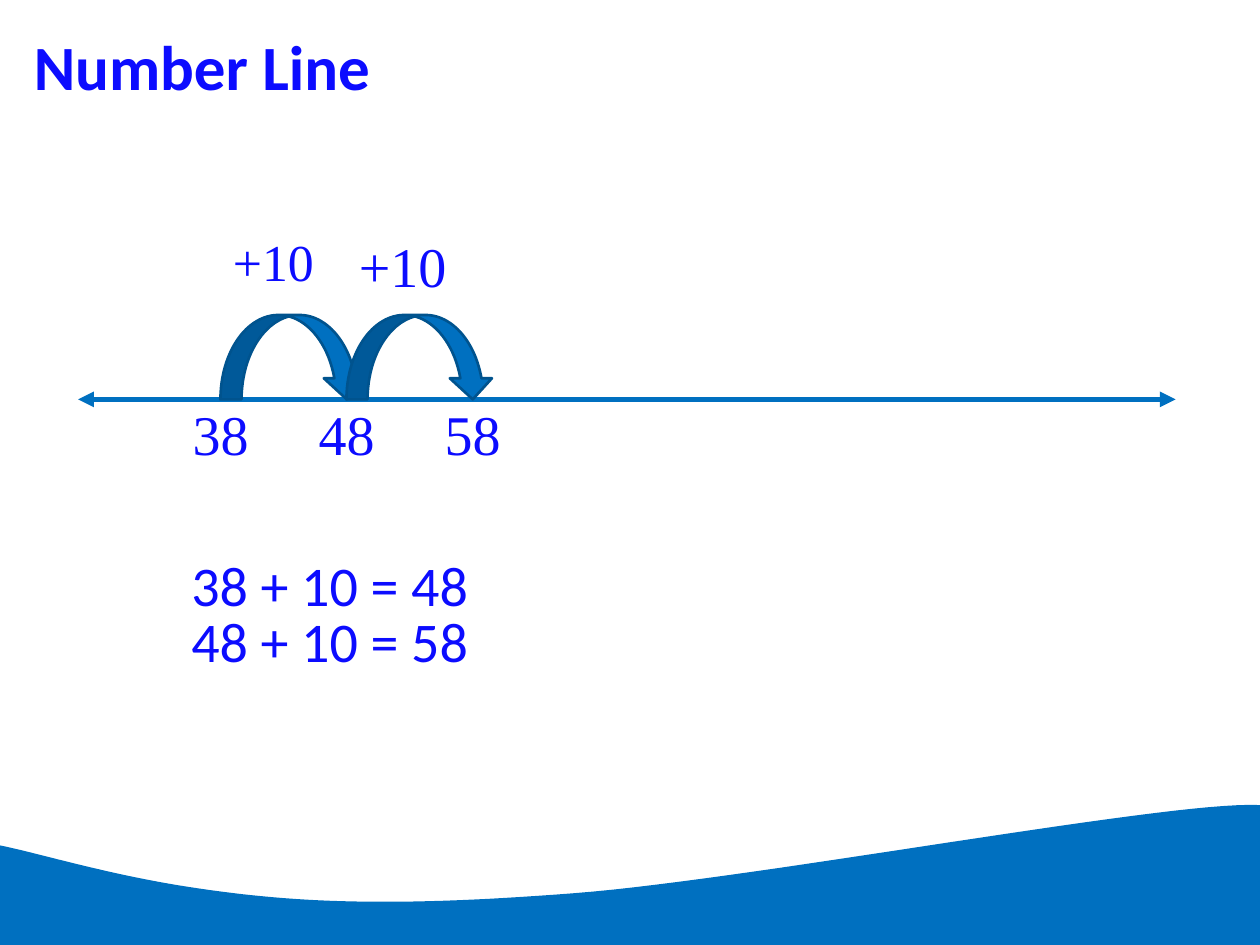
from lxml.etree import SubElement
from pptx import Presentation
from pptx.dml.color import RGBColor
from pptx.enum.shapes import MSO_CONNECTOR, MSO_SHAPE
from pptx.enum.text import MSO_ANCHOR
from pptx.oxml.ns import qn
from pptx.util import Inches, Pt

COLORS = {"wave": "0070C0", "edge": "00538E", "text": "0C0CFF"}
SANS, SERIF = "Calibri", "Times New Roman"

TITLE = "Number Line"
SUMS = ["38 + 10 = 48", "48 + 10 = 58"]
TICKS = ["38", "48", "58"]
# text, size, line spacing
JUMPS = [("+10", 29.6, 0.9), ("+10", 32, None)]
STEP = 1
LINE_Y = 3.17
# start point, then two controls and an end for each curve
CREST = [(0, 6.71),
         (0.3, 6.77), (0.85, 6.94), (1.5, 7.04),
         (2.34, 7.17), (3.12, 7.2), (4.55, 7.09),
         (5.98, 6.98), (9.3, 6.35), (10, 6.39)]

deck = Presentation()
deck.slide_width, deck.slide_height = Inches(10), Inches(7.5)
slide = deck.slides.add_slide(deck.slide_layouts[6])
shapes = slide.shapes


def color(name):
    return RGBColor.from_string(COLORS[name])


def bezier(a, b, c, d, count=30):
    """Points along a cubic curve, without its start."""
    for n in range(1, count + 1):
        t = n / count
        u = 1 - t
        yield tuple(u**3 * p + 3 * u * u * t * q + 3 * u * t * t * r + t**3 * s
                    for p, q, r, s in zip(a, b, c, d))


def add_wave():
    pts = [CREST[0]]
    for i in range(0, len(CREST) - 1, 3):
        pts += bezier(*CREST[i:i + 4])
    pts += [(10, 7.5), (0, 7.5)]
    spots = [(Inches(x), Inches(y)) for x, y in pts]
    form = shapes.build_freeform(*spots[0])
    form.add_line_segments(spots[1:], close=True)
    wave = form.convert_to_shape()
    wave.shadow.inherit = False
    wave.fill.solid()
    wave.fill.fore_color.rgb = color("wave")
    wave.line.fill.background()


def add_text(lines, box, size, font, bold=False, anchor=MSO_ANCHOR.MIDDLE,
             spacing=None, gap=0):
    frame = shapes.add_textbox(*map(Inches, box)).text_frame
    frame.word_wrap = True
    frame.vertical_anchor = anchor
    for i, line in enumerate(lines):
        para = frame.add_paragraph() if i else frame.paragraphs[0]
        para.line_spacing = spacing
        if i:
            para.space_before = Pt(gap)
        run = para.add_run()
        run.text = line
        run.font.size = Pt(size)
        run.font.name = font
        run.font.bold = bold
        run.font.color.rgb = color("text")


def add_axis():
    axis = shapes.add_connector(MSO_CONNECTOR.STRAIGHT, Inches(0.62),
                                Inches(LINE_Y), Inches(9.33), Inches(LINE_Y))
    axis.line.color.rgb = color("wave")
    axis.line.width = Pt(3)
    stroke = axis.line._get_or_add_ln()
    for end in ("a:headEnd", "a:tailEnd"):
        SubElement(stroke, qn(end), type="triangle")
    SubElement(axis._element.spPr, qn("a:effectLst"))


def add_jump(left):
    jump = shapes.add_shape(MSO_SHAPE.CURVED_DOWN_ARROW, Inches(left),
                            Inches(LINE_Y - 0.67), Inches(1.17), Inches(0.67))
    jump.shadow.inherit = False
    jump.fill.solid()
    jump.fill.fore_color.rgb = color("wave")
    jump.line.color.rgb = color("edge")
    jump.line.width = Pt(1.5)


add_wave()
add_text([TITLE], (0.17, 0.17, 9, 0.7), 36, SANS, bold=True)
add_text(SUMS, (1.42, 4.49, 4, 1), 32, SANS, anchor=MSO_ANCHOR.TOP,
         spacing=Pt(26), gap=6.4)
add_axis()
for i, (label, size, spacing) in enumerate(JUMPS):
    left = 1.75 + i * STEP
    add_jump(left)
    add_text([label], (left, 1.77, 1, 0.67), size, SERIF, spacing=spacing)
for i, tick in enumerate(TICKS):
    add_text([tick], (1.43 + i * STEP, 2.94, 1, 1), 32, SERIF)

deck.save("out.pptx")
